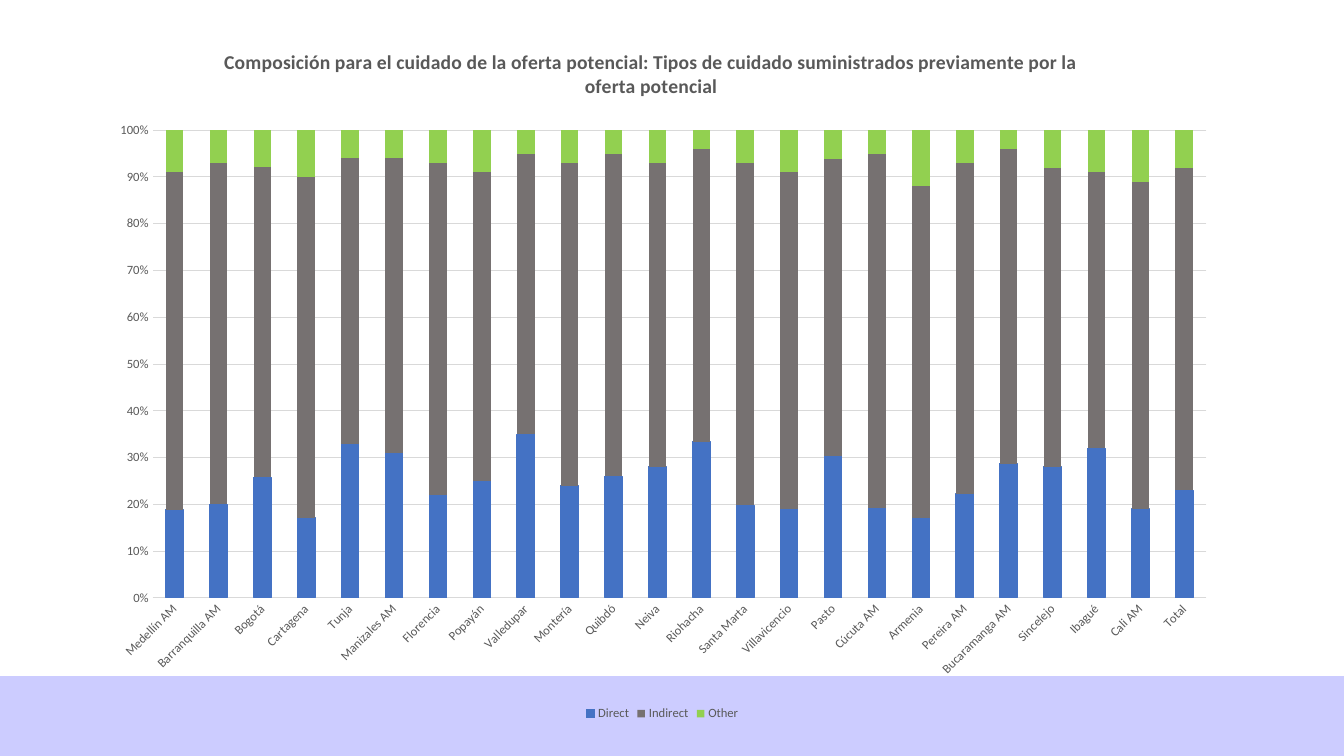
from dataclasses import dataclass

from lxml import etree
from pptx import Presentation
from pptx.chart.chart import Chart
from pptx.chart.data import CategoryChartData
from pptx.dml.color import RGBColor
from pptx.enum.chart import XL_CHART_TYPE, XL_LEGEND_POSITION, XL_TICK_MARK
from pptx.enum.shapes import MSO_SHAPE
from pptx.oxml.ns import qn
from pptx.slide import Slide
from pptx.text.text import Font
from pptx.util import Pt

STACKED = XL_CHART_TYPE.COLUMN_STACKED_100
LEGEND_BOTTOM = XL_LEGEND_POSITION.BOTTOM
NO_TICK = XL_TICK_MARK.NONE
RECTANGLE = MSO_SHAPE.RECTANGLE
EMU_PER_PX = 914400 / 100.8


@dataclass(frozen=True)
class Theme:
    font: str = "Calibri"
    text: RGBColor = RGBColor(0x59, 0x59, 0x59)
    grid: RGBColor = RGBColor(0xD9, 0xD9, 0xD9)
    band: RGBColor = RGBColor(0xCC, 0xCC, 0xFF)
    direct: RGBColor = RGBColor(0x44, 0x72, 0xC4)
    indirect: RGBColor = RGBColor(0x76, 0x71, 0x71)
    other: RGBColor = RGBColor(0x92, 0xD0, 0x50)
    title_size: int = 14
    label_size: int = 9
    line_width: float = 0.75


@dataclass(frozen=True)
class Box:
    left: int
    top: int
    width: int
    height: int

    def emu(self) -> tuple[int, int, int, int]:
        return px(self.left), px(self.top), px(self.width), px(self.height)


@dataclass(frozen=True)
class CareType:
    name: str
    color: RGBColor
    values: tuple[int, ...]
    outlined: bool = False


THEME = Theme()
BAND = Box(0, 677, 1344, 79)
CHART = Box(96, 31, 1133, 694)
TITLE = (
    "Composición para el cuidado de la oferta potencial: "
    "Tipos de cuidado suministrados previamente por la oferta potencial"
)
CITIES = (
    "Medellín AM", "Barranquilla AM", "Bogotá", "Cartagena", "Tunja", "Manizales AM",
    "Florencia", "Popayán", "Valledupar", "Montería", "Quibdó", "Neiva",
    "Riohacha", "Santa Marta", "Villavicencio", "Pasto", "Cúcuta AM", "Armenia",
    "Pereira AM", "Bucaramanga AM", "Sincelejo", "Ibagué", "Cali AM", "Total",
)
CARE_TYPES = (
    CareType("Direct", THEME.direct, (
        19, 20, 26, 17, 33, 31, 22, 25, 35, 24, 26, 28,
        33, 20, 19, 30, 19, 17, 22, 29, 28, 32, 19, 23), True),
    CareType("Indirect", THEME.indirect, (
        73, 73, 67, 72, 61, 63, 71, 66, 60, 69, 69, 65,
        62, 74, 72, 63, 75, 71, 70, 68, 64, 59, 70, 69)),
    CareType("Other", THEME.other, (
        9, 7, 8, 10, 6, 6, 7, 9, 5, 7, 5, 7,
        4, 7, 9, 6, 5, 12, 7, 4, 8, 9, 11, 8)),
)


def px(length: int) -> int:
    return round(length * EMU_PER_PX)


def style_font(font: Font, size: int, bold: bool = False) -> None:
    font.name = THEME.font
    font.size = Pt(size)
    font.bold = bold
    font.color.rgb = THEME.text


def set_layout(parent: etree._Element, index: int, settings: dict[str, object]) -> None:
    existing = parent.find(qn("c:layout"))
    if existing is not None:
        parent.remove(existing)
    layout = etree.Element(qn("c:layout"))
    manual = etree.SubElement(layout, qn("c:manualLayout"))
    for name, value in settings.items():
        etree.SubElement(manual, qn(f"c:{name}")).set("val", str(value))
    parent.insert(index, layout)


def add_band(slide: Slide) -> None:
    band = slide.shapes.add_shape(RECTANGLE, *BAND.emu())
    band.shadow.inherit = False
    band.fill.solid()
    band.fill.fore_color.rgb = THEME.band
    band.line.color.rgb = THEME.band
    band.line.width = Pt(1)


def add_care_chart(slide: Slide) -> Chart:
    data = CategoryChartData(number_format="#,##0")
    data.categories = CITIES
    for care_type in CARE_TYPES:
        data.add_series(care_type.name, care_type.values)
    chart = slide.shapes.add_chart(STACKED, *CHART.emu(), data).chart
    style_font(chart.font, THEME.label_size)
    plot = chart.plots[0]
    plot.gap_width = 150
    plot.overlap = 100
    plot.vary_by_categories = False
    for series, care_type in zip(plot.series, CARE_TYPES):
        series.format.fill.solid()
        series.format.fill.fore_color.rgb = care_type.color
        if care_type.outlined:
            series.format.line.color.rgb = care_type.color
            series.format.line.width = Pt(THEME.line_width)
    plot_area = chart.element.find(f".//{qn('c:plotArea')}")
    set_layout(plot_area, 0, {
        "layoutTarget": "inner", "xMode": "edge", "yMode": "edge",
        "x": 0.05, "y": 0.143, "w": 0.93, "h": 0.674,
    })
    return chart


def style_axes(chart: Chart) -> None:
    city_axis, share_axis = chart.category_axis, chart.value_axis
    for axis in (city_axis, share_axis):
        axis.major_tick_mark = NO_TICK
        axis.minor_tick_mark = NO_TICK
        style_font(axis.tick_labels.font, THEME.label_size)
    for line in (city_axis.format.line, share_axis.major_gridlines.format.line):
        line.color.rgb = THEME.grid
        line.width = Pt(THEME.line_width)
    city_labels = city_axis._element.find(f"{qn('c:txPr')}/{qn('a:bodyPr')}")
    city_labels.set("rot", "-2700000")
    share_axis.format.line.fill.background()
    share_axis.minimum_scale = 0
    share_axis.maximum_scale = 1
    share_axis.major_unit = 0.1
    share_axis.tick_labels.number_format = "0%"
    share_axis.tick_labels.number_format_is_linked = False


def add_title_and_legend(chart: Chart) -> None:
    chart.has_title = True
    frame = chart.chart_title.text_frame
    frame.text = TITLE
    style_font(frame.paragraphs[0].font, THEME.title_size, True)
    set_layout(chart.chart_title._element, 1, {
        "xMode": "edge", "yMode": "edge", "x": 0.11, "y": 0.02,
    })
    chart.has_legend = True
    chart.legend.position = LEGEND_BOTTOM
    chart.legend.include_in_layout = False
    style_font(chart.legend.font, THEME.label_size)


def main() -> None:
    presentation = Presentation()
    presentation.slide_width = px(1344)
    presentation.slide_height = px(756)
    slide = presentation.slides.add_slide(presentation.slide_layouts[6])
    add_band(slide)
    chart = add_care_chart(slide)
    style_axes(chart)
    add_title_and_legend(chart)
    presentation.save("out.pptx")


if __name__ == "__main__":
    main()
